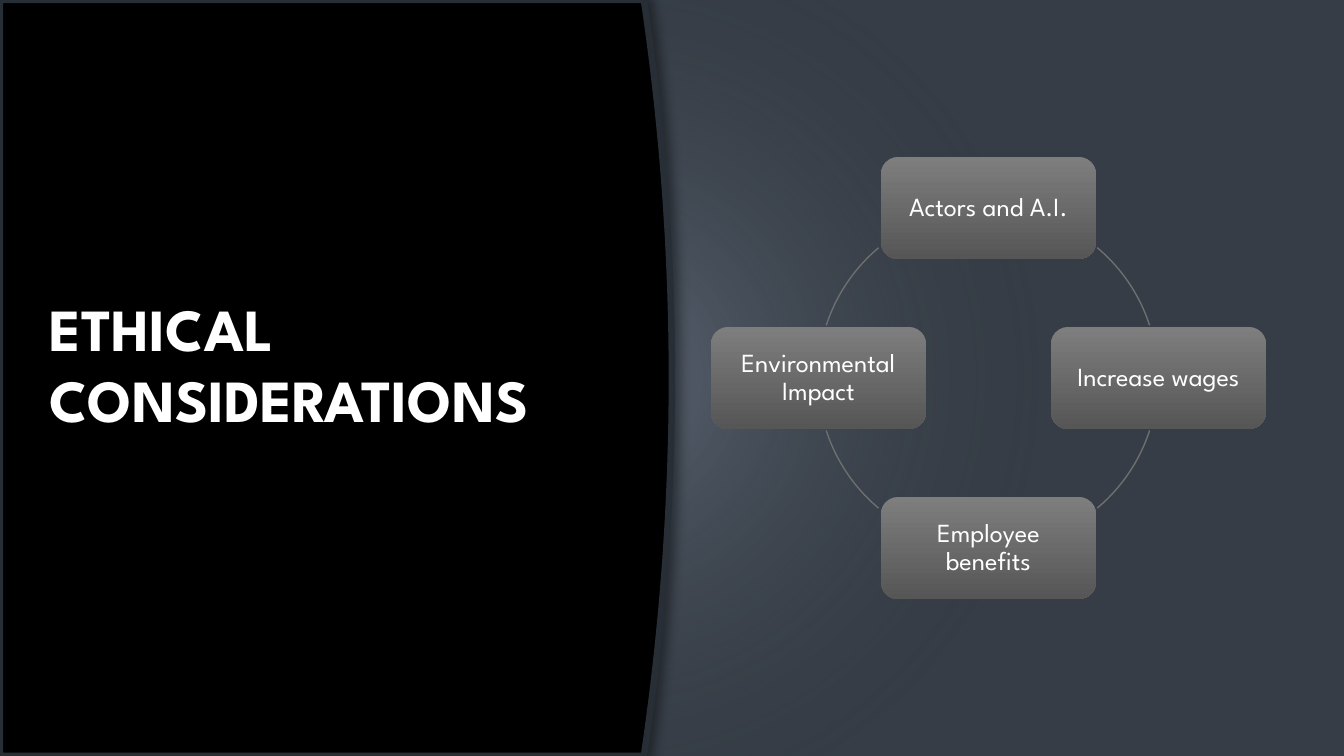
import math
from dataclasses import dataclass

from lxml import etree
from pptx import Presentation
from pptx.dml.color import RGBColor
from pptx.enum.shapes import MSO_SHAPE
from pptx.enum.text import MSO_ANCHOR, MSO_AUTO_SIZE, PP_ALIGN
from pptx.oxml.ns import qn
from pptx.util import Emu, Pt

RECTANGLE = MSO_SHAPE.RECTANGLE
ROUNDED = MSO_SHAPE.ROUNDED_RECTANGLE
ARC = MSO_SHAPE.ARC
MIDDLE = MSO_ANCHOR.MIDDLE
NO_AUTOFIT = MSO_AUTO_SIZE.NONE
LEFT, CENTER = PP_ALIGN.LEFT, PP_ALIGN.CENTER

PX = 914400 / 134.4
WIDTH, HEIGHT = 1344, 756
TITLE_ONLY = 5
ADJUSTMENT_PER_DEGREE = 0.6


@dataclass(frozen=True)
class Theme:
    font: str = "League Spartan"
    title_size: int = 32
    label_size: int = 14
    text: str = "FFFFFF"
    panel: str = "000000"
    panel_edge: str = "282E35"
    backdrop: str = "363D46"
    glow: tuple = ((0, "A8B1BC", 50), (10, "7C899A", 40), (70, "363D46", 0))
    node_top: str = "7E7E7E"
    node_bottom: str = "565656"
    ring: str = "6F6F6F"


@dataclass(frozen=True)
class Box:
    left: int
    top: int
    width: int
    height: int

    def emu(self) -> list:
        return [px(self.left), px(self.top), px(self.width), px(self.height)]


@dataclass(frozen=True)
class Node:
    label: str
    angle: int


THEME = Theme()
NODES = (
    Node("Actors and A.I.", -90),
    Node("Increase wages", 0),
    Node("Employee benefits", 90),
    Node("Environmental Impact", 180),
)
RING_X, RING_Y, RING_RADIUS = 988, 378, 170
NODE_WIDTH, NODE_HEIGHT = 215, 102
ARC_SPANS = ((310, 342), (18, 50), (130, 162), (198, 230))
PANEL_EDGE_X, PANEL_BULGE, PANEL_STEPS = 644, 28, 42


def px(value: float) -> Emu:
    return Emu(round(value * PX))


def color(value: str) -> RGBColor:
    return RGBColor.from_string(value)


def add_preset(slide, kind, box: Box):
    shape = slide.shapes.add_shape(kind, *box.emu())
    shape.shadow.inherit = False
    shape.line.fill.background()
    return shape


def write_text(shape, text: str, size: int, bold: bool, alignment, spacing: float) -> None:
    frame = shape.text_frame
    frame.word_wrap = True
    frame.auto_size = NO_AUTOFIT
    frame.vertical_anchor = MIDDLE
    paragraph = frame.paragraphs[0]
    paragraph.alignment = alignment
    paragraph.line_spacing = spacing
    run = paragraph.add_run()
    run.text = text
    run.font.name = THEME.font
    run.font.size = Pt(size)
    run.font.bold = bold
    run.font.color.rgb = color(THEME.text)


def add_backdrop(slide) -> None:
    shape = add_preset(slide, RECTANGLE, Box(0, 0, WIDTH, HEIGHT))
    shape.fill.solid()
    shape.fill.fore_color.rgb = color(THEME.backdrop)


def add_glow(slide) -> None:
    shape = add_preset(slide, RECTANGLE, Box(84, 0, 1033, HEIGHT))
    shape.fill.gradient()
    gradient = shape.element.spPr.find(qn("a:gradFill"))
    for child in list(gradient):
        gradient.remove(child)
    stops = etree.SubElement(gradient, qn("a:gsLst"))
    for position, value, opacity in THEME.glow:
        stop = etree.SubElement(stops, qn("a:gs"), pos=str(position * 1000))
        stop_color = etree.SubElement(stop, qn("a:srgbClr"), val=value)
        etree.SubElement(stop_color, qn("a:alpha"), val=str(opacity * 1000))
    radial = etree.SubElement(gradient, qn("a:path"), path="circle")
    etree.SubElement(radial, qn("a:fillToRect"), l="50000", t="50000", r="50000", b="50000")


def add_panel(slide) -> None:
    builder = slide.shapes.build_freeform(0, 0, scale=1.0)
    points = []
    for step in range(PANEL_STEPS + 1):
        offset = 2 * step / PANEL_STEPS - 1
        x = PANEL_EDGE_X + PANEL_BULGE * (1 - offset**2)
        points.append((px(x), px(HEIGHT * step / PANEL_STEPS)))
    points.append((0, px(HEIGHT)))
    builder.add_line_segments(points, close=True)
    shape = builder.convert_to_shape()
    shape.shadow.inherit = False
    shape.fill.solid()
    shape.fill.fore_color.rgb = color(THEME.panel)
    shape.line.color.rgb = color(THEME.panel_edge)
    shape.line.width = Pt(3.5)
    effects = shape.element.spPr.find(qn("a:effectLst"))
    shadow = etree.SubElement(
        effects, qn("a:outerShdw"), blurRad=str(Pt(6)), dist=str(Pt(2)), dir="0"
    )
    shadow_color = etree.SubElement(shadow, qn("a:srgbClr"), val=THEME.panel)
    etree.SubElement(shadow_color, qn("a:alpha"), val="40000")


def place_title(slide, text: str) -> None:
    title = slide.shapes.title
    title.left, title.top, title.width, title.height = Box(36, 56, 548, 614).emu()
    title.element.getparent().append(title.element)
    write_text(title, text, THEME.title_size, True, LEFT, 1.0)


def add_arc(slide, start: int, end: int) -> None:
    diameter = 2 * RING_RADIUS
    box = Box(RING_X - RING_RADIUS, RING_Y - RING_RADIUS, diameter, diameter)
    shape = add_preset(slide, ARC, box)
    shape.adjustments[0] = start * ADJUSTMENT_PER_DEGREE
    shape.adjustments[1] = end * ADJUSTMENT_PER_DEGREE
    shape.fill.background()
    shape.line.color.rgb = color(THEME.ring)
    shape.line.width = Pt(0.75)


def add_node(slide, node: Node) -> None:
    radians = math.radians(node.angle)
    x = round(RING_X + RING_RADIUS * math.cos(radians))
    y = round(RING_Y + RING_RADIUS * math.sin(radians))
    box = Box(x - NODE_WIDTH // 2, y - NODE_HEIGHT // 2, NODE_WIDTH, NODE_HEIGHT)
    shape = add_preset(slide, ROUNDED, box)
    shape.fill.gradient()
    shape.fill.gradient_angle = 270
    for stop, value, position in zip(
        shape.fill.gradient_stops, (THEME.node_top, THEME.node_bottom), (0, 1)
    ):
        stop.color.rgb = color(value)
        stop.position = position
    write_text(shape, node.label, THEME.label_size, False, CENTER, 0.9)


def main() -> None:
    presentation = Presentation()
    presentation.slide_width, presentation.slide_height = px(WIDTH), px(HEIGHT)
    slide = presentation.slides.add_slide(presentation.slide_layouts[TITLE_ONLY])
    slide.background.fill.solid()
    slide.background.fill.fore_color.rgb = color(THEME.panel)
    add_backdrop(slide)
    add_glow(slide)
    add_panel(slide)
    place_title(slide, "ETHICAL CONSIDERATIONS")
    for start, end in ARC_SPANS:
        add_arc(slide, start, end)
    for node in NODES:
        add_node(slide, node)
    presentation.save("out.pptx")


if __name__ == "__main__":
    main()
